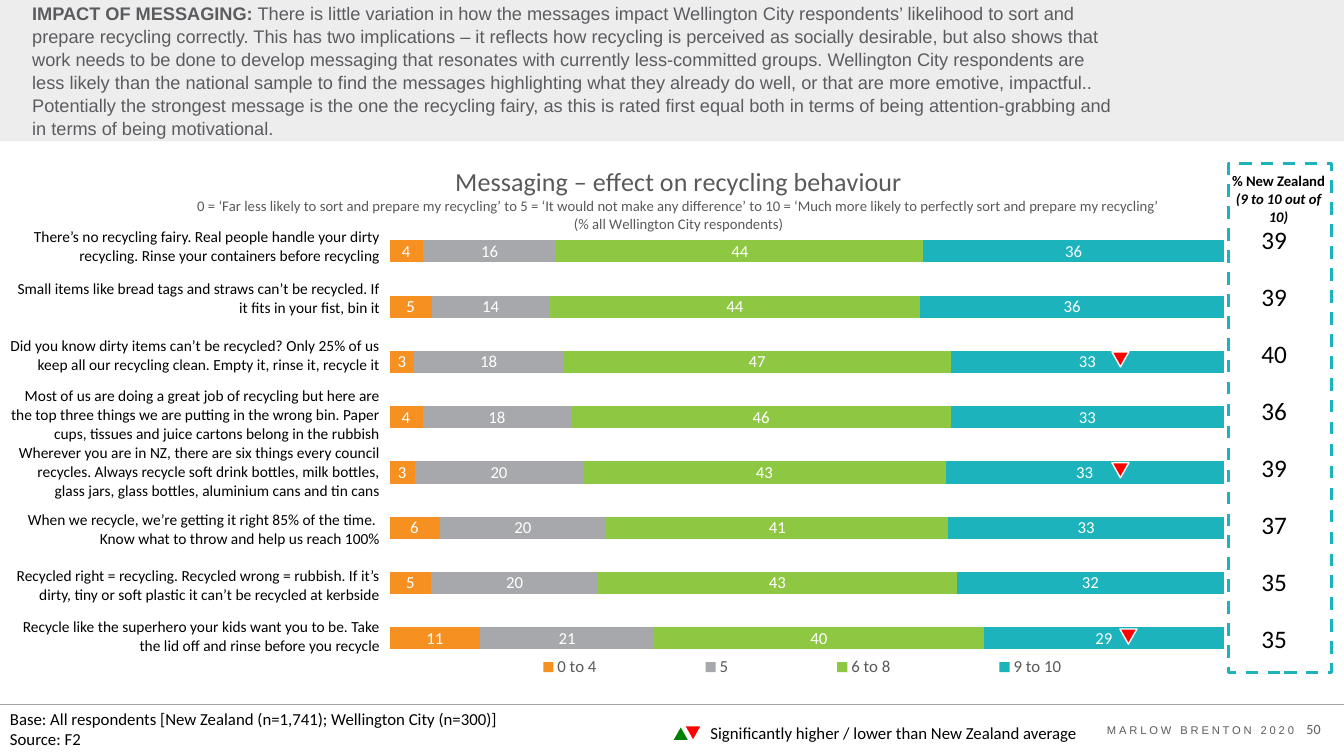
from lxml import etree
from pptx import Presentation
from pptx.chart.data import CategoryChartData
from pptx.dml.color import RGBColor
from pptx.enum import chart as charts, dml, shapes, text
from pptx.oxml.ns import qn
from pptx.util import Pt

ORANGE, GREY, GREEN, TEAL = "F69021", "A7A8AB", "8EC742", "1CB3BC"
BLACK, WHITE, SLATE, CHARCOAL = "000000", "FFFFFF", "5B5C60", "595959"
HIGHER, LOWER = "008000", "FF0000"
LEFT, CENTER, RIGHT = text.PP_ALIGN.LEFT, text.PP_ALIGN.CENTER, text.PP_ALIGN.RIGHT
NO_TABLE_STYLE = "{2D5ABB26-0587-4C30-8999-92F81FD0307C}"

HEADLINE = (
    "There is little variation in how the messages impact Wellington City respondents’ "
    "likelihood to sort and prepare recycling correctly. This has two implications – it "
    "reflects how recycling is perceived as socially desirable, but also shows that work "
    "needs to be done to develop messaging that resonates with currently less-committed "
    "groups. Wellington City respondents are less likely than the national sample to find "
    "the messages highlighting what they already do well, or that are more emotive, "
    "impactful.. Potentially the strongest message is the one the recycling fairy, as this "
    "is rated first equal both in terms of being attention-grabbing and in terms of being "
    "motivational.")
CHART_TITLE = [
    ("Messaging – effect on recycling behaviour", 18.6),
    ("0 = ‘Far less likely to sort and prepare my recycling’ to 5 = ‘It would not make any "
     "difference’ to 10 = ‘Much more likely to perfectly sort and prepare my recycling’", 10.5),
    ("(% all Wellington City respondents)", 10.5)]
RATINGS = [
    ("0 to 4", ORANGE, (4, 5, 3, 4, 3, 6, 5, 11)),
    ("5", GREY, (16, 14, 18, 18, 20, 20, 20, 21)),
    ("6 to 8", GREEN, (44, 44, 47, 46, 43, 41, 43, 40)),
    ("9 to 10", TEAL, (36, 36, 33, 33, 33, 33, 32, 29))]
MESSAGES = [
    "There’s no recycling fairy. Real people handle your dirty recycling. Rinse your "
    "containers before recycling",
    "Small items like bread tags and straws can’t be recycled. If it fits in your fist, bin it",
    "Did you know dirty items can’t be recycled? Only 25% of us keep all our recycling "
    "clean. Empty it, rinse it, recycle it",
    "Most of us are doing a great job of recycling but here are the top three things we are "
    "putting in the wrong bin. Paper cups, tissues and juice cartons belong in the rubbish",
    "Wherever you are in NZ, there are six things every council recycles. Always recycle soft "
    "drink bottles, milk bottles, glass jars, glass bottles, aluminium cans and tin cans",
    "When we recycle, we’re getting it right 85% of the time.  Know what to throw and help "
    "us reach 100%",
    "Recycled right = recycling. Recycled wrong = rubbish. If it’s dirty, tiny or soft "
    "plastic it can’t be recycled at kerbside",
    "Recycle like the superhero your kids want you to be. Take the lid off and rinse before "
    "you recycle"]
MESSAGE_HEIGHTS = [36, 38.2, 43.9, 38.9, 38.9, 43.9, 36, 36]
NATIONAL = [39, 39, 40, 36, 39, 37, 35, 35]


def rgb(color):
    return RGBColor.from_string(color)


def set_font(font, size, color, name="Calibri", bold=False, italic=False):
    font.name, font.size, font.color.rgb = name, Pt(size), rgb(color)
    font.bold, font.italic = bold, italic


def add_run(paragraph, words, size, color, **style):
    run = paragraph.add_run()
    run.text = words
    set_font(run.font, size, color, **style)
    return run


def add_lines(parent, box, lines, size, color=BLACK, align=LEFT,
              anchor=text.MSO_ANCHOR.TOP, spacing=0):
    """Add a text box; each line is (words, style) and spacing is in points per letter."""
    frame = parent.add_textbox(*map(Pt, box)).text_frame
    frame.word_wrap = True
    frame.vertical_anchor = anchor
    for number, (words, style) in enumerate(lines):
        paragraph = frame.add_paragraph() if number else frame.paragraphs[0]
        paragraph.alignment = align
        run = add_run(paragraph, words, size, color, **style)
        if spacing:
            run.font._element.set("spc", str(spacing * 100))


def add_outline(parent, kind, box, fill=None, line=None, width=1):
    shape = parent.add_shape(kind, *map(Pt, box))
    shape.shadow.inherit = False
    if fill:
        shape.fill.solid()
        shape.fill.fore_color.rgb = rgb(fill)
    else:
        shape.fill.background()
    if line:
        shape.line.color.rgb = rgb(line)
        shape.line.width = Pt(width)
    else:
        shape.line.fill.background()
    return shape


def add_marker(parent, left, top, color):
    marker = add_outline(parent, shapes.MSO_SHAPE.ISOSCELES_TRIANGLE,
                         (left, top, 12.2, 10.8), color, WHITE)
    marker.rotation = 180 if color == LOWER else 0


def add_column(parent, left, top, width, heights, entries, size, align, margins=None):
    """Add a plain one-column table, with margins as left, top, right, bottom."""
    frame = parent.add_table(len(entries), 1, Pt(left), Pt(top), Pt(width), Pt(sum(heights)))
    table = frame.table
    table.first_row = table.horz_banding = False
    frame.element.find(".//" + qn("a:tableStyleId")).text = NO_TABLE_STYLE
    for row, height, entry in zip(table.rows, heights, entries):
        row.height = Pt(height)
        cell = row.cells[0]
        cell.fill.background()
        if margins:
            cell.vertical_anchor = text.MSO_ANCHOR.MIDDLE
            (cell.margin_left, cell.margin_top,
             cell.margin_right, cell.margin_bottom) = map(Pt, margins)
        paragraph = cell.text_frame.paragraphs[0]
        paragraph.alignment = align
        add_run(paragraph, str(entry), size, BLACK)


def place_part(chart, tag, position, inner=False, **fractions):
    """Lay out a chart part by fractions of the chart's size."""
    part = chart.element.find(".//" + qn(tag))
    for old in part.findall(qn("c:layout")):
        part.remove(old)
    layout = etree.Element(qn("c:layout"))
    manual = etree.SubElement(layout, qn("c:manualLayout"))
    if inner:
        etree.SubElement(manual, qn("c:layoutTarget")).set("val", "inner")
    for mode in ("xMode", "yMode"):
        etree.SubElement(manual, qn("c:" + mode)).set("val", "edge")
    for side, fraction in fractions.items():
        etree.SubElement(manual, qn("c:" + side)).set("val", str(fraction))
    part.insert(position, layout)


def add_ratings_chart(parent, box):
    ratings = CategoryChartData()
    ratings.categories = [str(number + 1) for number in range(len(MESSAGES))]
    for name, _, values in RATINGS:
        ratings.add_series(name, values)
    chart = parent.add_chart(charts.XL_CHART_TYPE.BAR_STACKED_100, *map(Pt, box), ratings).chart
    set_font(chart.font, 10, BLACK)
    chart.category_axis.reverse_order = True
    for axis in (chart.category_axis, chart.value_axis):
        axis.visible = axis.has_major_gridlines = False

    heading = chart.chart_title.text_frame
    for number, (words, size) in enumerate(CHART_TITLE):
        paragraph = heading.add_paragraph() if number else heading.paragraphs[0]
        add_run(paragraph, words, size, CHARCOAL)
    chart.has_legend = True
    chart.legend.position = charts.XL_LEGEND_POSITION.BOTTOM
    chart.legend.include_in_layout = False
    set_font(chart.legend.font, 12, CHARCOAL)

    plot = chart.plots[0]
    plot.gap_width, plot.overlap, plot.vary_by_categories = 150, 100, False
    for series, (_, color, _) in zip(plot.series, RATINGS):
        series.format.fill.solid()
        series.format.fill.fore_color.rgb = rgb(color)
        labels = series.data_labels
        labels.show_value = True
        labels.position = charts.XL_LABEL_POSITION.CENTER
        set_font(labels.font, 12, WHITE)
    place_part(chart, "c:title", 1, x=0.14, y=0.01)
    place_part(chart, "c:plotArea", 0, inner=True, x=0.299, y=0.124, w=0.679, h=0.799)
    place_part(chart, "c:legend", 1, x=0.34, y=0.9, w=0.59, h=0.05)


def fill_title(title):
    title.left, title.top, title.width, title.height = map(Pt, (15.8, 10.8, 788.4, 78.5))
    frame = title.text_frame
    frame.word_wrap = True
    frame.auto_size = text.MSO_AUTO_SIZE.NONE
    frame.vertical_anchor = text.MSO_ANCHOR.MIDDLE
    paragraph = frame.paragraphs[0]
    paragraph.alignment = LEFT
    paragraph.line_spacing = 1.05
    add_run(paragraph, "IMPACT OF MESSAGING: ", 13, SLATE, name="Arial", bold=True)
    add_run(paragraph, HEADLINE, 13, SLATE, name="Arial")


def add_footer(parent):
    rule = parent.add_connector(shapes.MSO_CONNECTOR.STRAIGHT, 0, Pt(503.3), Pt(960), Pt(503.3))
    rule.line.color.rgb = rgb("A6A6A6")
    rule.line.width = Pt(0.5)
    etree.SubElement(rule.element.spPr, qn("a:effectLst"))
    add_lines(parent, (770.4, 507.6, 161.3, 28), [("MARLOW BRENTON 2020", {"name": "Arial"})],
              8, SLATE, RIGHT, text.MSO_ANCHOR.MIDDLE, spacing=2)
    add_lines(parent, (917.3, 511.2, 33.1, 19.4), [("50", {})], 10, SLATE, RIGHT)
    add_lines(parent, (0, 502.6, 771.8, 36),
              [("Base: All respondents [New Zealand (n=1,741); Wellington City (n=300)]", {}),
               ("Source: F2", {})], 12)
    key = parent.add_group_shape().shapes
    add_marker(key, 480.2, 518.4, HIGHER)
    add_marker(key, 488.9, 518.4, LOWER)
    add_lines(key, (500.4, 512.6, 299.5, 21.6),
              [("Significantly higher / lower than New Zealand average", {})], 12)


def main():
    deck = Presentation()
    deck.slide_width, deck.slide_height = Pt(960), Pt(540)
    slide = deck.slides.add_slide(deck.slide_layouts[5])
    parts = slide.shapes
    band = add_outline(parts, shapes.MSO_SHAPE.RECTANGLE, (0, 0, 960, 100.8), "EDEDED")
    parts.title.element.addprevious(band.element)
    fill_title(parts.title)
    add_footer(parts)

    add_ratings_chart(parts, (15.8, 110.9, 877.7, 395.3))
    add_column(parts, 5, 157.7, 267.1, MESSAGE_HEIGHTS, MESSAGES, 11, RIGHT,
               margins=(0.7, 0.7, 0.7, 0))
    add_column(parts, 891.4, 157.7, 37.4, [40.7] * len(NATIONAL), NATIONAL, 18, CENTER)
    add_lines(parts, (872.6, 119.5, 81.4, 45.4),
              [("% New Zealand", {"bold": True}),
               ("(9 to 10 out of 10)", {"bold": True, "italic": True})], 10.5, align=CENTER)
    national_frame = add_outline(parts, shapes.MSO_SHAPE.RECTANGLE,
                                 (877.7, 116.6, 73.4, 363.6), line=TEAL, width=2.25)
    national_frame.line.dash_style = dml.MSO_LINE.DASH
    for left, top in ((794.2, 251.3), (794.2, 330.5), (799.9, 449.3)):
        add_marker(parts, left, top, LOWER)
    deck.save("out.pptx")


if __name__ == "__main__":
    main()
